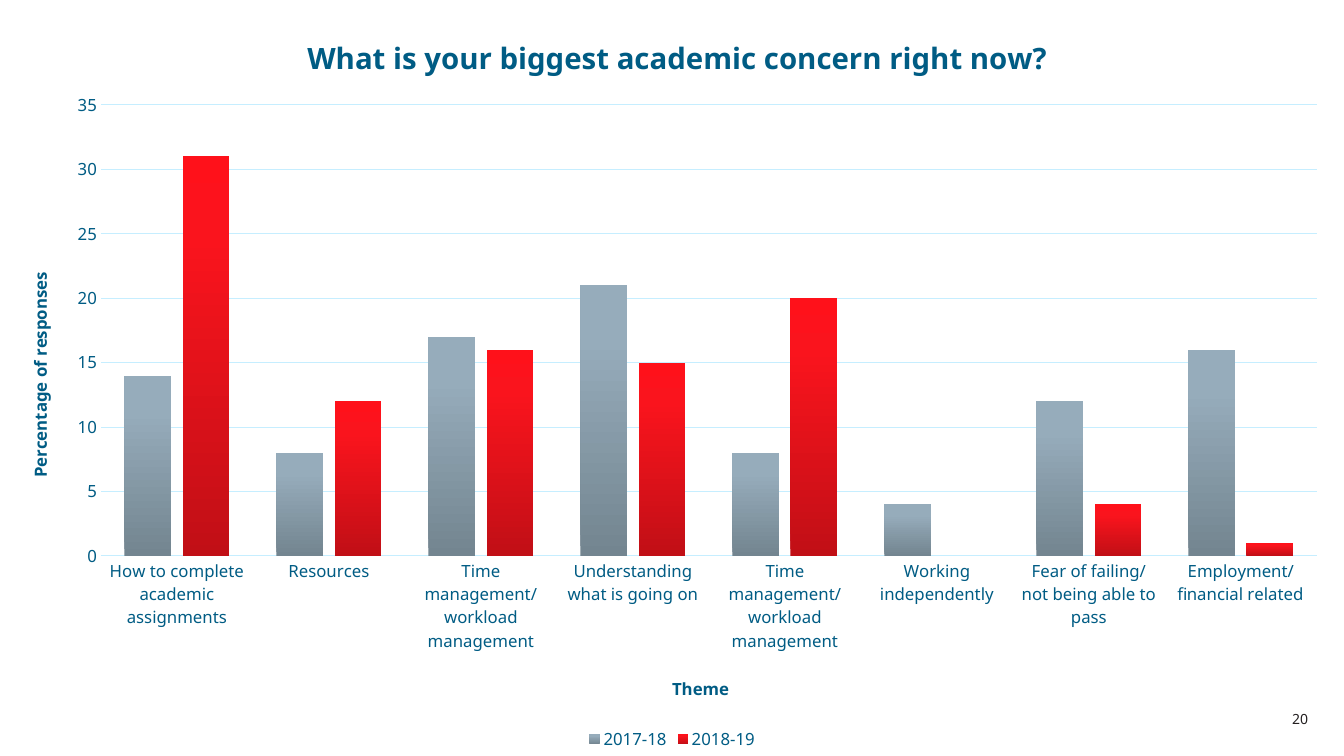
import copy

import pptx
import pptx.chart.data
import pptx.dml.color
import pptx.enum.chart
import pptx.enum.text
import pptx.oxml
import pptx.oxml.ns
import pptx.util

WIDTH, HEIGHT = 1344, 756
BLUE, PALE_BLUE, INK = "005C84", "C6EEFF", "231F20"
THEMES = [
    "How to complete academic assignments",
    "Resources",
    "Time management/ workload management",
    "Understanding what is going on",
    "Time management/ workload management",
    "Working independently",
    "Fear of failing/ not being able to pass",
    "Employment/ financial related",
]
RESPONSES = {
    "2017-18": [14, 8, 17, 21, 8, 4, 12, 16],
    "2018-19": [31, 12, 16, 15, 20, 0, 4, 1],
}
GRADIENTS = [("738590", "96ACBB", "96ADBD"), ("C10F16", "FA141D", "FF111A")]
STOPS = (0, 0.8, 1)


def px(length):
    return pptx.util.Emu(round(length * 914400 / 100.8))


def rgb(colour):
    return pptx.dml.color.RGBColor.from_string(colour)


class SlideBuilder:
    """Holds the text style and the current slide."""

    def __init__(self, slide, font_name="Noto Sans"):
        self.slide = slide
        self.font_name = font_name

    def style(self, font, size, colour, bold=False):
        font.name = self.font_name
        font.size = pptx.util.Pt(size)
        font.bold = bold
        font.color.rgb = rgb(colour)

    def text(self, words, left, top, width, height, size, colour):
        box = self.slide.shapes.add_textbox(px(left), px(top), px(width), px(height))
        box.text_frame.word_wrap = True
        paragraph = box.text_frame.paragraphs[0]
        paragraph.text = words
        paragraph.alignment = pptx.enum.text.PP_ALIGN.RIGHT
        self.style(paragraph.runs[0].font, size, colour)

    def place(self, element, left, top, width=None, height=None):
        qn = pptx.oxml.ns.qn
        for old in element.findall(qn("c:layout")):
            element.remove(old)
        inner = '<c:layoutTarget val="inner"/>' if width else ""
        parts = {"x": left / WIDTH, "y": top / HEIGHT}
        modes = '<c:xMode val="edge"/><c:yMode val="edge"/>'
        if width:
            parts.update(w=width / WIDTH, h=height / HEIGHT)
        values = "".join(f'<c:{key} val="{part:.4f}"/>' for key, part in parts.items())
        layout = pptx.oxml.parse_xml(
            f'<c:layout {pptx.oxml.ns.nsdecls("c")}><c:manualLayout>'
            f"{inner}{modes}{values}</c:manualLayout></c:layout>"
        )
        overlay = element.find(qn("c:overlay"))
        element.insert(0 if overlay is None else element.index(overlay), layout)

    def title(self, title, words, left, top, size):
        title.text_frame.text = words
        self.style(title.text_frame.paragraphs[0].runs[0].font, size, BLUE, bold=True)
        self.place(title.element, left, top)

    def axis(self, axis, words, left, top):
        axis.major_tick_mark = axis.minor_tick_mark = pptx.enum.chart.XL_TICK_MARK.NONE
        self.style(axis.tick_labels.font, 12, BLUE)
        self.title(axis.axis_title, words, left, top, 12)

    def pale_line(self, line):
        line.color.rgb = rgb(PALE_BLUE)
        line.width = pptx.util.Pt(0.75)

    def gradients(self, chart):
        for series, colours in zip(chart.plots[0].series, GRADIENTS):
            series.invert_if_negative = False
            fill = series.format.fill
            fill.gradient()
            fill.gradient_angle = 90
            stop_list = list(chart.element.iter(pptx.oxml.ns.qn("a:gsLst")))[-1]
            stop_list.append(copy.deepcopy(stop_list[-1]))
            for stop, position, colour in zip(fill.gradient_stops, STOPS, colours):
                stop.position = position
                stop.color.rgb = rgb(colour)

    def column_chart(self):
        data = pptx.chart.data.CategoryChartData()
        data.categories = THEMES
        for year, percentages in RESPONSES.items():
            data.add_series(year, percentages)
        chart = self.slide.shapes.add_chart(
            pptx.enum.chart.XL_CHART_TYPE.COLUMN_CLUSTERED,
            0, 0, px(WIDTH), px(HEIGHT), data,
        ).chart
        self.style(chart.font, 10, INK)
        self.title(chart.chart_title, "What is your biggest academic concern right now?", 302, 29, 21)

        self.axis(chart.category_axis, "Theme", 669, 673)
        self.pale_line(chart.category_axis.format.line)
        responses = chart.value_axis
        self.axis(responses, "Percentage of responses", 24, 269)
        body = next(responses.axis_title.element.iter(pptx.oxml.ns.qn("a:bodyPr")))
        body.set("rot", "-5400000")
        body.set("vert", "horz")
        responses.minimum_scale, responses.maximum_scale = 0, 35
        responses.major_unit = 5
        responses.format.line.fill.background()
        self.pale_line(responses.major_gridlines.format.line)

        chart.has_legend = True
        chart.legend.position = pptx.enum.chart.XL_LEGEND_POSITION.BOTTOM
        chart.legend.include_in_layout = False
        self.style(chart.legend.font, 12, BLUE)
        self.place(chart.legend.element if hasattr(chart.legend, "element")
                   else next(chart.element.iter(pptx.oxml.ns.qn("c:legend"))), 584, 726)
        plot_area = next(chart.element.iter(pptx.oxml.ns.qn("c:plotArea")))
        self.place(plot_area, 101, 105, 1216, 451)

        columns = chart.plots[0]
        columns.vary_by_categories = False
        columns.gap_width = 100
        columns.overlap = -24
        self.gradients(chart)


def main():
    deck = pptx.Presentation()
    deck.slide_width, deck.slide_height = px(WIDTH), px(HEIGHT)
    builder = SlideBuilder(deck.slides.add_slide(deck.slide_layouts[6]))
    builder.text("20", 1212, 706, 106, 27, 10, INK)
    builder.column_chart()
    deck.save("out.pptx")


if __name__ == "__main__":
    main()
